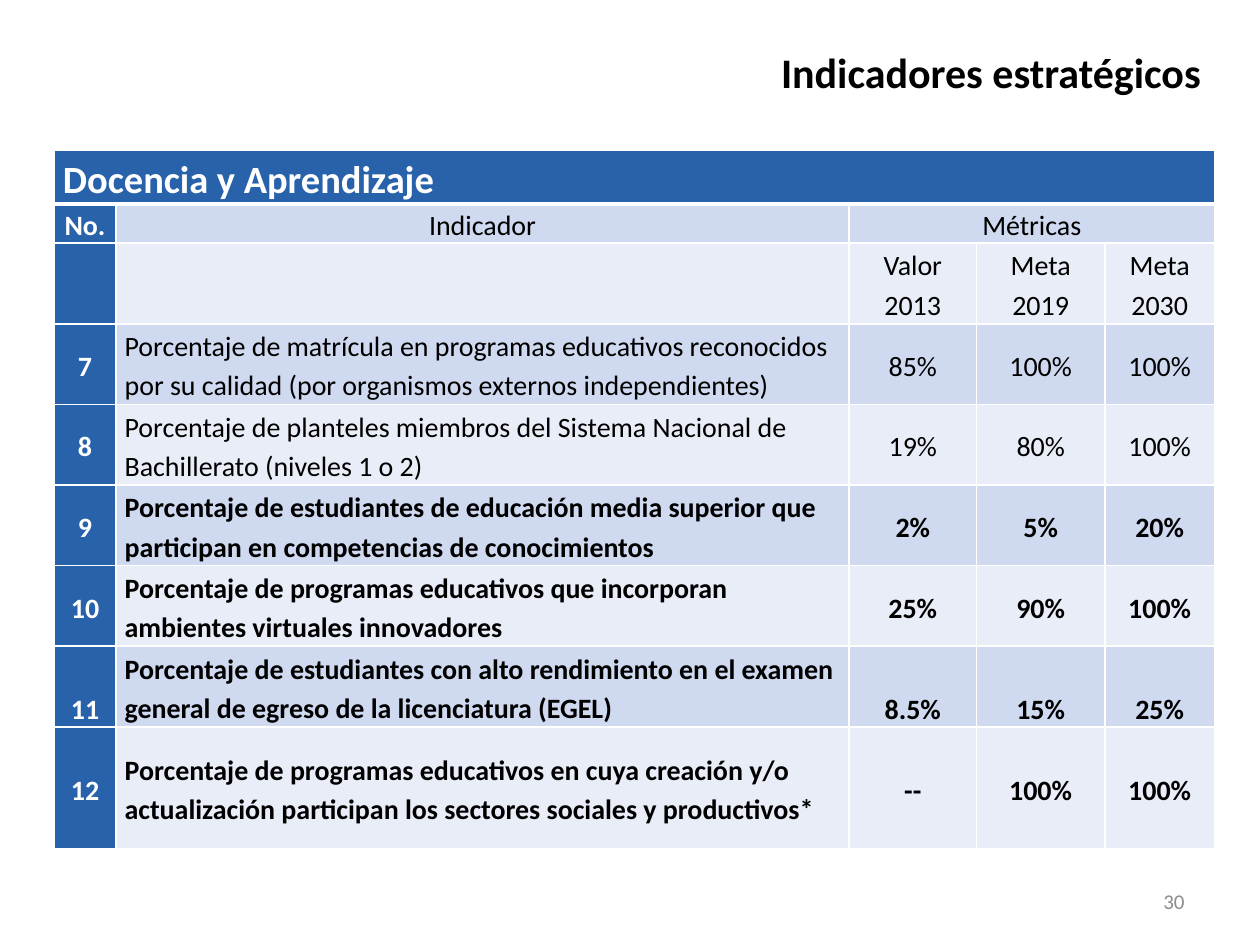
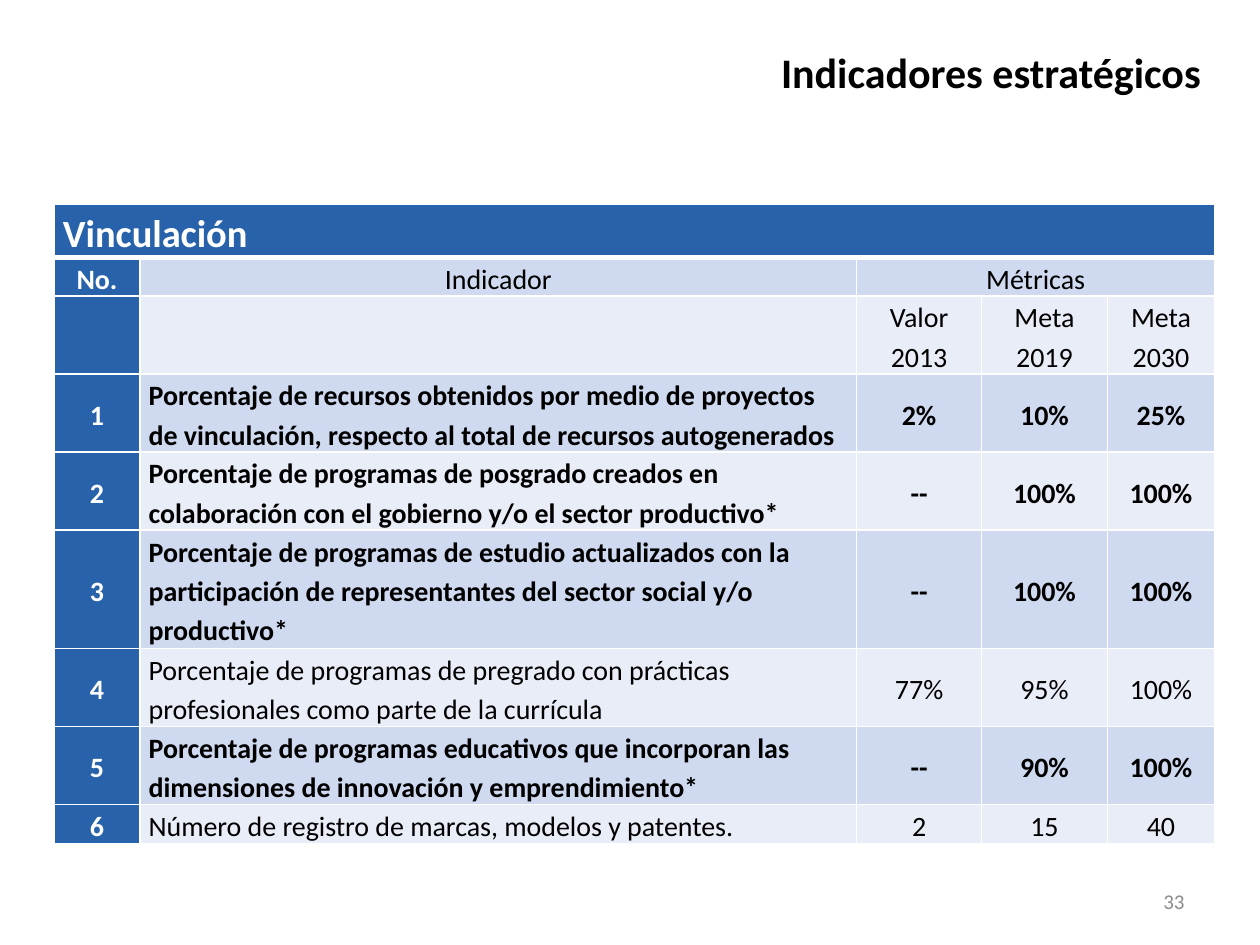
from dataclasses import dataclass

from lxml import etree
from pptx import Presentation
from pptx.dml.color import RGBColor
from pptx.enum.text import MSO_ANCHOR, MSO_AUTO_SIZE, PP_ALIGN
from pptx.oxml.ns import qn
from pptx.util import Inches, Pt

LEFT, CENTER, RIGHT = PP_ALIGN.LEFT, PP_ALIGN.CENTER, PP_ALIGN.RIGHT
MIDDLE, BOTTOM = MSO_ANCHOR.MIDDLE, MSO_ANCHOR.BOTTOM
FIT_SHAPE = MSO_AUTO_SIZE.SHAPE_TO_FIT_TEXT

FONT = "Calibri"
COLORS = {
    "header": "2862AA",
    "dark band": "CFD9EF",
    "light band": "E9EDF7",
    "white": "FFFFFF",
    "black": "000000",
    "page number": "8C8C8C",
}
TITLE = "Indicadores estratégicos"
TABLE_LEFT = 0.43
METRICS = ("Valor 2013", "Meta 2019", "Meta 2030")


@dataclass
class Indicator:
    number: int
    name: str
    values: tuple[str, str, str]
    bold: bool = True
    value_anchor: MSO_ANCHOR = MIDDLE


@dataclass
class IndicatorPage:
    heading: str
    page_number: int
    top: float
    widths: list[float]
    heights: list[float]
    indicators: list[Indicator]


PAGES = [
    IndicatorPage(
        "Docencia y Aprendizaje", 30, 1.19,
        [0.49, 5.82, 1.01, 1.02, 0.87],
        [0.43, 0.31] + [0.64] * 6 + [0.97],
        [
            Indicator(7, "Porcentaje de matrícula en programas educativos reconocidos por su "
                      "calidad (por organismos externos independientes)",
                      ("85%", "100%", "100%"), bold=False),
            Indicator(8, "Porcentaje de planteles miembros del Sistema Nacional de "
                      "Bachillerato (niveles 1 o 2)",
                      ("19%", "80%", "100%"), bold=False),
            Indicator(9, "Porcentaje de estudiantes de educación media superior que "
                      "participan en competencias de conocimientos",
                      ("2%", "5%", "20%")),
            Indicator(10, "Porcentaje de programas educativos que incorporan ambientes "
                      "virtuales innovadores",
                      ("25%", "90%", "100%")),
            Indicator(11, "Porcentaje de estudiantes con alto rendimiento en el examen "
                      "general de egreso de la licenciatura (EGEL)",
                      ("8.5%", "15%", "25%"), value_anchor=BOTTOM),
            Indicator(12, "Porcentaje de programas educativos en cuya creación y/o "
                      "actualización participan los sectores sociales y productivos*",
                      ("--", "100%", "100%")),
        ],
    ),
    IndicatorPage(
        "Vinculación", 33, 1.62,
        [0.68, 5.69, 0.99, 1.0, 0.85],
        [0.41, 0.3] + [0.62] * 3 + [0.94] + [0.62] * 2 + [0.3],
        [
            Indicator(1, "Porcentaje de recursos obtenidos por medio de proyectos de "
                      "vinculación, respecto al total de recursos autogenerados",
                      ("2%", "10%", "25%")),
            Indicator(2, "Porcentaje de programas de posgrado creados en colaboración con "
                      "el gobierno y/o el sector productivo*",
                      ("--", "100%", "100%")),
            Indicator(3, "Porcentaje de programas de estudio actualizados con la "
                      "participación de representantes del sector social y/o productivo*",
                      ("--", "100%", "100%")),
            Indicator(4, "Porcentaje de programas de pregrado con prácticas profesionales "
                      "como parte de la currícula",
                      ("77%", "95%", "100%"), bold=False),
            Indicator(5, "Porcentaje de programas educativos que incorporan las dimensiones "
                      "de innovación y emprendimiento*",
                      ("--", "90%", "100%")),
            Indicator(6, "Número de registro de marcas, modelos y patentes.",
                      ("2", "15", "40"), bold=False),
        ],
    ),
]


def color(name: str) -> RGBColor:
    return RGBColor.from_string(COLORS[name])


def style_paragraph(para, size: int, color_name: str, bold: bool, align: PP_ALIGN) -> None:
    para.alignment = align
    para.font.name = FONT
    para.font.size = Pt(size)
    para.font.bold = bold
    para.font.color.rgb = color(color_name)


def add_text(page, text: str, left: float, top: float, width: float, height: float,
             size: int, color_name: str, bold: bool, align: PP_ALIGN):
    box = page.shapes.add_textbox(Inches(left), Inches(top), Inches(width), Inches(height))
    frame = box.text_frame
    frame.word_wrap = True
    frame.text = text
    style_paragraph(frame.paragraphs[0], size, color_name, bold, align)
    return frame


def add_borders(cell, top: int, bottom: int) -> None:
    """Draw white cell edges; the left and right ones are 1 pt wide."""
    properties = cell._tc.get_or_add_tcPr()
    for edge, points in (("a:lnL", 1), ("a:lnR", 1), ("a:lnT", top), ("a:lnB", bottom)):
        line = etree.SubElement(properties, qn(edge), w=str(Pt(points)))
        fill = etree.SubElement(line, qn("a:solidFill"))
        etree.SubElement(fill, qn("a:srgbClr"), val=COLORS["white"])


def fill_cell(cell, text: str, fill: str, color_name: str = "black", bold: bool = False,
              align: PP_ALIGN = CENTER, size: int = 16, anchor: MSO_ANCHOR = MIDDLE) -> None:
    cell.fill.solid()
    cell.fill.fore_color.rgb = color(fill)
    cell.margin_left = cell.margin_right = Inches(0.07)
    cell.margin_top = cell.margin_bottom = 0
    cell.vertical_anchor = anchor
    cell.text = text
    para = cell.text_frame.paragraphs[0]
    para.line_spacing = 1.15
    style_paragraph(para, size, color_name, bold, align)


def add_indicator_table(page, content: IndicatorPage) -> None:
    table = page.shapes.add_table(
        len(content.heights), len(content.widths), Inches(TABLE_LEFT), Inches(content.top),
        Inches(sum(content.widths)), Inches(sum(content.heights))).table
    table.first_row = table.horz_banding = False
    for column, width in zip(table.columns, content.widths):
        column.width = Inches(width)
    for index, (row, height) in enumerate(zip(table.rows, content.heights)):
        row.height = Inches(height)
        for cell in row.cells:
            add_borders(cell, top=3 if index == 1 else 1, bottom=3 if index == 0 else 1)

    # Heading across the table
    table.cell(0, 0).merge(table.cell(0, 4))
    fill_cell(table.cell(0, 0), content.heading, "header", "white", True, LEFT, 22)

    # Two rows of column labels
    table.cell(1, 2).merge(table.cell(1, 4))
    labels = [("No.", "Indicador", "Métricas"), ("", "", *METRICS)]
    for index, (texts, band) in enumerate(zip(labels, ("dark band", "light band")), start=1):
        fill_cell(table.cell(index, 0), texts[0], "header", "white", True)
        for column, text in enumerate(texts[1:], start=1):
            fill_cell(table.cell(index, column), text, band)

    # Indicators in alternating bands
    for index, item in enumerate(content.indicators, start=3):
        band = "dark band" if index % 2 else "light band"
        fill_cell(table.cell(index, 0), str(item.number), "header", "white", True,
                  anchor=item.value_anchor)
        fill_cell(table.cell(index, 1), item.name, band, bold=item.bold, align=LEFT)
        for column, value in enumerate(item.values, start=2):
            fill_cell(table.cell(index, column), value, band, bold=item.bold,
                      anchor=item.value_anchor)


def add_page(deck, content: IndicatorPage) -> None:
    page = deck.slides.add_slide(deck.slide_layouts[6])
    footer = add_text(page, str(content.page_number), 7.17, 6.95, 2.33, 0.4,
                      12, "page number", False, RIGHT)
    footer.vertical_anchor = MIDDLE
    add_indicator_table(page, content)
    title = add_text(page, TITLE, 6.1, 0.32, 3.65, 0.5, 24, "black", True, LEFT)
    title.word_wrap = False
    title.auto_size = FIT_SHAPE


def main() -> None:
    deck = Presentation()
    deck.slide_width, deck.slide_height = Inches(10), Inches(7.5)
    for content in PAGES:
        add_page(deck, content)
    deck.save("out.pptx")


if __name__ == "__main__":
    main()
